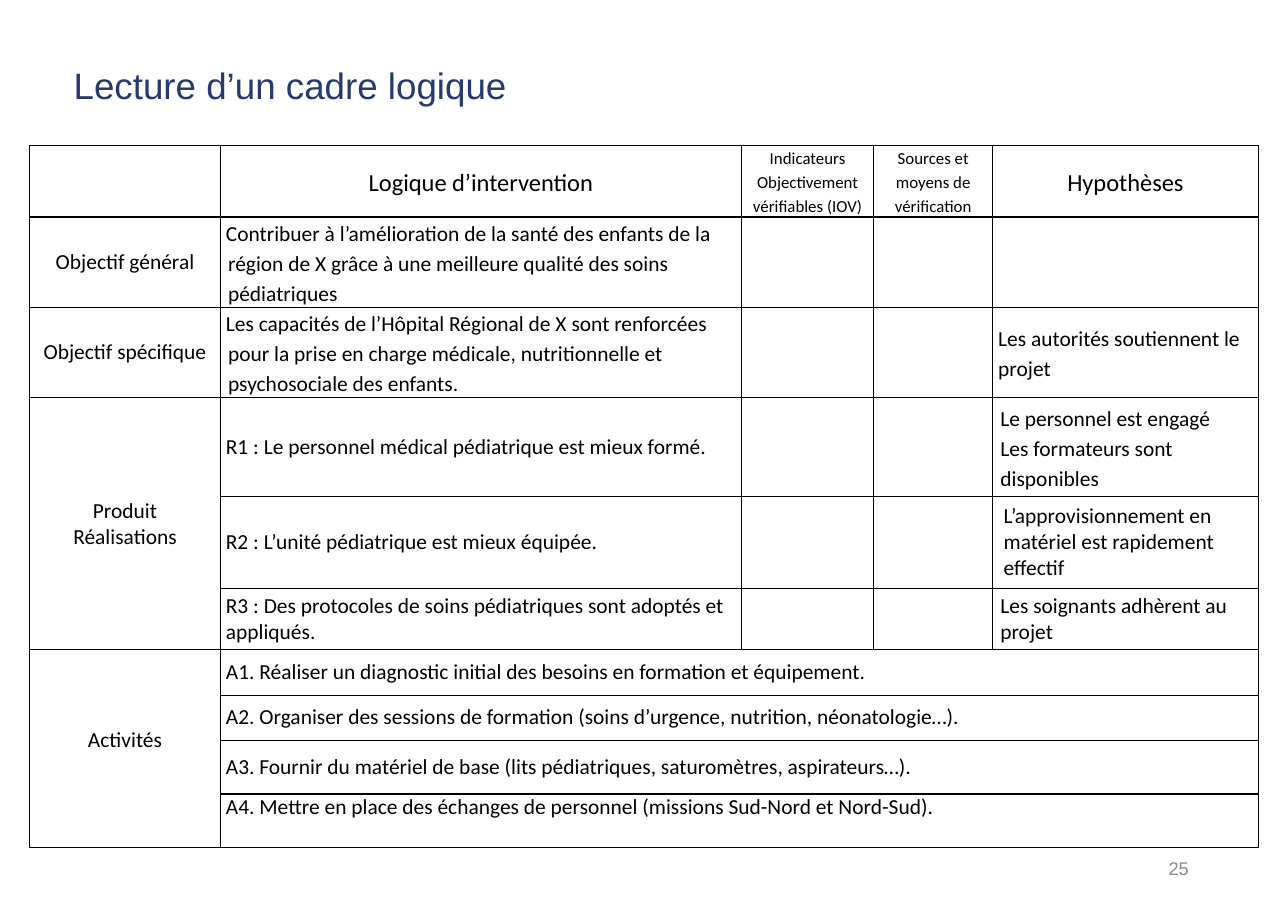
from lxml.etree import SubElement
from pptx import Presentation
from pptx.dml.color import RGBColor
from pptx.enum.text import MSO_ANCHOR, PP_ALIGN
from pptx.oxml.ns import qn
from pptx.util import Inches, Pt

COLORS = {"title": "273B70", "number": "8C8C8C", "text": "000000",
          "line": "000000", "fill": "FFFFFF"}
TITLE = "Lecture d’un cadre logique"
PAGE_NUMBER = "25"

COLUMNS = [1.73, 4.73, 1.2, 1.08, 2.41]
ROWS = [0.65, 0.82, 0.82, 0.9, 0.83, 0.56, 0.41, 0.41, 0.49, 0.48]
HEAVY_LINES = {0, 1, 3, 6, 9}  # horizontal grid lines, counted from the top
MERGES = [(3, 0, 5, 0), (6, 0, 9, 0)] + [(row, 1, row, 4) for row in range(6, 10)]

# (row, column): paragraphs
CELLS = {
    (0, 1): ["Logique d’intervention"],
    (0, 2): ["Indicateurs Objectivement vérifiables (IOV)"],
    (0, 3): ["Sources et moyens de vérification"],
    (0, 4): ["Hypothèses"],
    (1, 0): ["Objectif général"],
    (1, 1): ["Contribuer à l’amélioration de la santé des enfants de la région de X "
             "grâce à une meilleure qualité des soins pédiatriques"],
    (2, 0): ["Objectif spécifique"],
    (2, 1): ["Les capacités de l’Hôpital Régional de X sont renforcées pour la prise en "
             "charge médicale, nutritionnelle et psychosociale des enfants."],
    (2, 4): ["Les autorités soutiennent le projet"],
    (3, 0): ["Produit", "Réalisations"],
    (3, 1): ["R1 : Le personnel médical pédiatrique est mieux formé."],
    (3, 4): ["Le personnel est engagé", "Les formateurs sont disponibles"],
    (4, 1): ["R2 : L’unité pédiatrique est mieux équipée."],
    (4, 4): ["L’approvisionnement en matériel est rapidement effectif"],
    (5, 1): ["R3 : Des protocoles de soins pédiatriques sont adoptés et appliqués."],
    (5, 4): ["Les soignants adhèrent au projet"],
    (6, 0): ["Activités"],
    (6, 1): ["A1. Réaliser un diagnostic initial des besoins en formation et équipement."],
    (7, 1): ["A2. Organiser des sessions de formation (soins d’urgence, nutrition, "
             "néonatologie…)."],
    (8, 1): ["A3. Fournir du matériel de base (lits pédiatriques, saturomètres, "
             "aspirateurs…)."],
    (9, 1): ["A4. Mettre en place des échanges de personnel (missions Sud-Nord et "
             "Nord-Sud)."],
}
SIZES = {(0, 1): 16, (0, 2): 11, (0, 3): 11, (0, 4): 16}
HANGING = {(1, 1), (2, 1)}
LOOSE = {(0, 1), (0, 2), (0, 3), (0, 4), (1, 1), (2, 1), (2, 4), (3, 4)}
MARGINS = {(3, 4): (0.07, 0.03), (4, 4): (0.1, 0.05), (5, 4): (0.07, 0.03)}


def add_run(paragraph, text, size, font, color):
    run = paragraph.add_run()
    run.text = text
    run.font.size = Pt(size)
    run.font.name = font
    run.font.color.rgb = RGBColor.from_string(COLORS[color])


def add_label(slide, box, text, size, color, align):
    shape = slide.shapes.add_textbox(*map(Inches, box))
    frame = shape.text_frame
    frame.word_wrap = True
    frame.vertical_anchor = MSO_ANCHOR.MIDDLE
    paragraph = frame.paragraphs[0]
    paragraph.alignment = align
    add_run(paragraph, text, size, "Arial", color)


def add_borders(cell, row, column, owners):
    """Draw the edges of a cell, leaving out those inside a merged area."""
    owner = owners.get((row, column), (row, column))
    bottom = row + (cell.span_height if cell.is_merge_origin else 1)
    edges = [("a:lnL", (row, column - 1), None), ("a:lnR", (row, column + 1), None),
             ("a:lnT", (row - 1, column), row), ("a:lnB", (row + 1, column), bottom)]
    properties = cell._tc.get_or_add_tcPr()
    for tag, neighbour, grid_line in edges:
        if cell.is_spanned and owners.get(neighbour, neighbour) == owner:
            continue
        width = Pt(1 if grid_line in HEAVY_LINES else 0.5)
        line = SubElement(properties, qn(tag), w=str(width))
        fill = SubElement(line, qn("a:solidFill"))
        SubElement(fill, qn("a:srgbClr"), val=COLORS["line"])


def fill_cell(cell, position, texts):
    row, column = position
    side, top = MARGINS.get(position, (0.05, 0))
    cell.margin_left = cell.margin_right = Inches(side)
    cell.margin_top = cell.margin_bottom = Inches(top)
    if position == (6, 0):
        cell.margin_bottom = Inches(0.15)
    last_row = row == len(ROWS) - 1
    cell.vertical_anchor = MSO_ANCHOR.TOP if last_row else MSO_ANCHOR.MIDDLE
    frame = cell.text_frame
    for index, text in enumerate(texts):
        paragraph = frame.add_paragraph() if index else frame.paragraphs[0]
        centred = row == 0 or column == 0
        paragraph.alignment = PP_ALIGN.CENTER if centred else PP_ALIGN.LEFT
        if position in LOOSE:
            paragraph.line_spacing = 1.15
        if position in HANGING:
            indents = paragraph._p.get_or_add_pPr()
            indents.set("marL", str(Inches(0.02)))
            indents.set("indent", str(Inches(-0.03)))
        add_run(paragraph, text, SIZES.get(position, 14), "Calibri", "text")


def add_framework(slide):
    frame = slide.shapes.add_table(len(ROWS), len(COLUMNS), Inches(0.27), Inches(1.32),
                                   Inches(sum(COLUMNS)), Inches(sum(ROWS)))
    table = frame.table
    table.first_row = table.horz_banding = False
    for column, width in zip(table.columns, COLUMNS):
        column.width = Inches(width)
    for row, height in zip(table.rows, ROWS):
        row.height = Inches(height)

    owners = {}
    for top, left, bottom, right in MERGES:
        table.cell(top, left).merge(table.cell(bottom, right))
        for row in range(top, bottom + 1):
            for column in range(left, right + 1):
                owners[row, column] = (top, left)

    for row in range(len(ROWS)):
        for column in range(len(COLUMNS)):
            cell = table.cell(row, column)
            add_borders(cell, row, column, owners)
            cell.fill.solid()
            cell.fill.fore_color.rgb = RGBColor.from_string(COLORS["fill"])
            fill_cell(cell, (row, column), CELLS.get((row, column), []))


def main():
    presentation = Presentation()
    presentation.slide_width = Inches(11.69)
    presentation.slide_height = Inches(8.27)
    slide = presentation.slides.add_slide(presentation.slide_layouts[6])
    add_label(slide, (8.26, 7.66, 2.63, 0.44), PAGE_NUMBER, 12, "number", PP_ALIGN.RIGHT)
    add_label(slide, (0.57, 0.34, 10.78, 0.86), TITLE, 24, "title", PP_ALIGN.LEFT)
    add_framework(slide)
    presentation.save("out.pptx")


if __name__ == "__main__":
    main()
